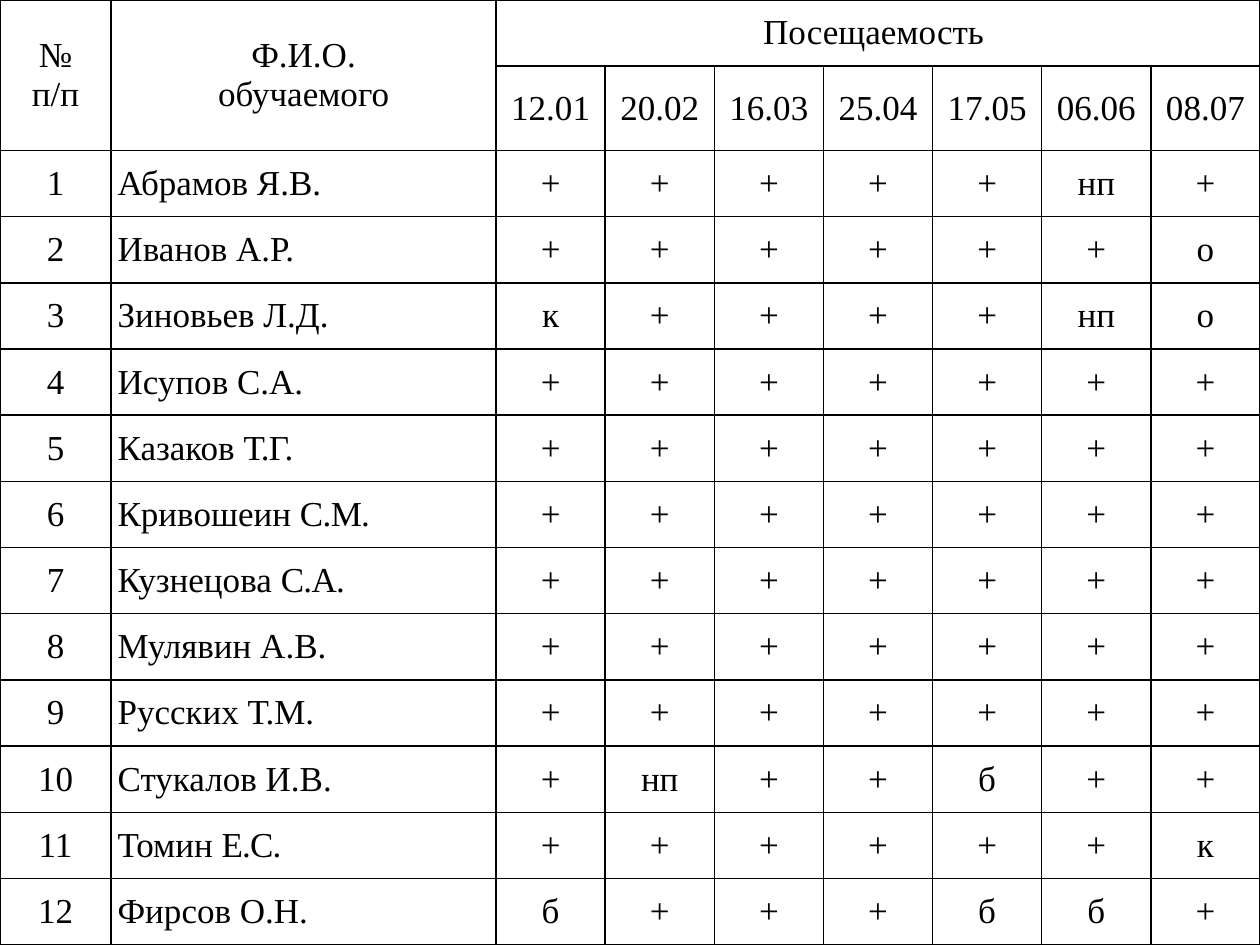
from lxml.etree import SubElement
from pptx import Presentation
from pptx.dml.color import RGBColor
from pptx.enum.text import MSO_ANCHOR, PP_ALIGN
from pptx.oxml.ns import qn
from pptx.util import Cm, Pt

BLACK = "000000"
WHITE = "FFFFFF"
FONT_NAME = "Times New Roman"
SLIDE_WIDTH, SLIDE_HEIGHT = Cm(25.4), Cm(19.05)
NUMBER_WIDTH, NAME_WIDTH = Cm(2.24), Cm(7.76)
DATE_ROW_HEIGHT = Cm(1.7)
HEADER_ROWS = 2
NAME_COLUMN = 1
FIRST_DATE_COLUMN = 2

DATES = ["12.01", "20.02", "16.03", "25.04", "17.05", "06.06", "08.07"]
STUDENTS = [
    ("Абрамов Я.В.", "+ + + + + нп +"),
    ("Иванов А.Р.", "+ + + + + + о"),
    ("Зиновьев Л.Д.", "к + + + + нп о"),
    ("Исупов С.А.", "+ + + + + + +"),
    ("Казаков Т.Г.", "+ + + + + + +"),
    ("Кривошеин С.М.", "+ + + + + + +"),
    ("Кузнецова С.А.", "+ + + + + + +"),
    ("Мулявин А.В.", "+ + + + + + +"),
    ("Русских Т.М.", "+ + + + + + +"),
    ("Стукалов И.В.", "+ нп + + б + +"),
    ("Томин Е.С.", "+ + + + + + к"),
    ("Фирсов О.Н.", "б + + + б б +"),
]
INITIALS_SPACING = {
    "Казаков Т.Г.": -0.4,
    "Кривошеин С.М.": -0.4,
    "Кузнецова С.А.": -0.4,
    "Томин Е.С.": -0.5,
}


def color(value):
    return RGBColor.from_string(value)


def add_borders(cell):
    properties = cell._tc.get_or_add_tcPr()
    for side in ("a:lnL", "a:lnR", "a:lnT", "a:lnB"):
        line = SubElement(properties, qn(side), w=str(Pt(1)))
        fill = SubElement(line, qn("a:solidFill"))
        SubElement(fill, qn("a:srgbClr"), val=BLACK)


def format_cell(cell):
    add_borders(cell)
    cell.fill.solid()
    cell.fill.fore_color.rgb = color(WHITE)
    cell.vertical_anchor = MSO_ANCHOR.MIDDLE
    cell.margin_left = cell.margin_right = Cm(0.13)
    cell.margin_top = cell.margin_bottom = 0


def format_paragraph(paragraph, alignment):
    paragraph.alignment = alignment
    paragraph.font.name = FONT_NAME
    paragraph.font.size = Pt(20)
    paragraph.font.color.rgb = color(BLACK)


def write_cell(cell, text, alignment=PP_ALIGN.CENTER):
    cell.text = text
    for paragraph in cell.text_frame.paragraphs:
        format_paragraph(paragraph, alignment)


def write_name(cell, name):
    if name not in INITIALS_SPACING:
        write_cell(cell, name, PP_ALIGN.LEFT)
        return
    surname, initials = name.split()
    write_cell(cell, surname + " ", PP_ALIGN.LEFT)
    run = cell.text_frame.paragraphs[0].add_run()
    run.text = initials
    run.font._element.set("spc", str(round(INITIALS_SPACING[name] * 100)))


def add_attendance_table(slide):
    row_count = HEADER_ROWS + len(STUDENTS)
    column_count = FIRST_DATE_COLUMN + len(DATES)
    table = slide.shapes.add_table(
        row_count, column_count, 0, 0, SLIDE_WIDTH, SLIDE_HEIGHT
    ).table
    table.first_row = table.horz_banding = False

    date_width = (SLIDE_WIDTH - NUMBER_WIDTH - NAME_WIDTH) // len(DATES)
    widths = [NUMBER_WIDTH, NAME_WIDTH] + [date_width] * len(DATES)
    for column, width in zip(table.columns, widths):
        column.width = width
    for row in table.rows:
        row.height = (SLIDE_HEIGHT - DATE_ROW_HEIGHT) // (row_count - 1)
    table.rows[1].height = DATE_ROW_HEIGHT

    for cell in table.iter_cells():
        format_cell(cell)
    return table


def fill_header(table):
    for column in (0, NAME_COLUMN):
        table.cell(0, column).merge(table.cell(1, column))
    last_column = len(table.columns) - 1
    table.cell(0, FIRST_DATE_COLUMN).merge(table.cell(0, last_column))
    for column, title in enumerate(["№\nп/п", "Ф.И.О.\nобучаемого", "Посещаемость "]):
        write_cell(table.cell(0, column), title)
    for column, date in enumerate(DATES, FIRST_DATE_COLUMN):
        write_cell(table.cell(1, column), date)


def fill_students(table):
    for number, (name, marks) in enumerate(STUDENTS, 1):
        row = HEADER_ROWS + number - 1
        write_cell(table.cell(row, 0), str(number))
        write_name(table.cell(row, NAME_COLUMN), name)
        for column, mark in enumerate(marks.split(), FIRST_DATE_COLUMN):
            write_cell(table.cell(row, column), mark)


def main():
    presentation = Presentation()
    presentation.slide_width = SLIDE_WIDTH
    presentation.slide_height = SLIDE_HEIGHT
    slide = presentation.slides.add_slide(presentation.slide_layouts[6])
    table = add_attendance_table(slide)
    fill_header(table)
    fill_students(table)
    presentation.save("out.pptx")


if __name__ == "__main__":
    main()
